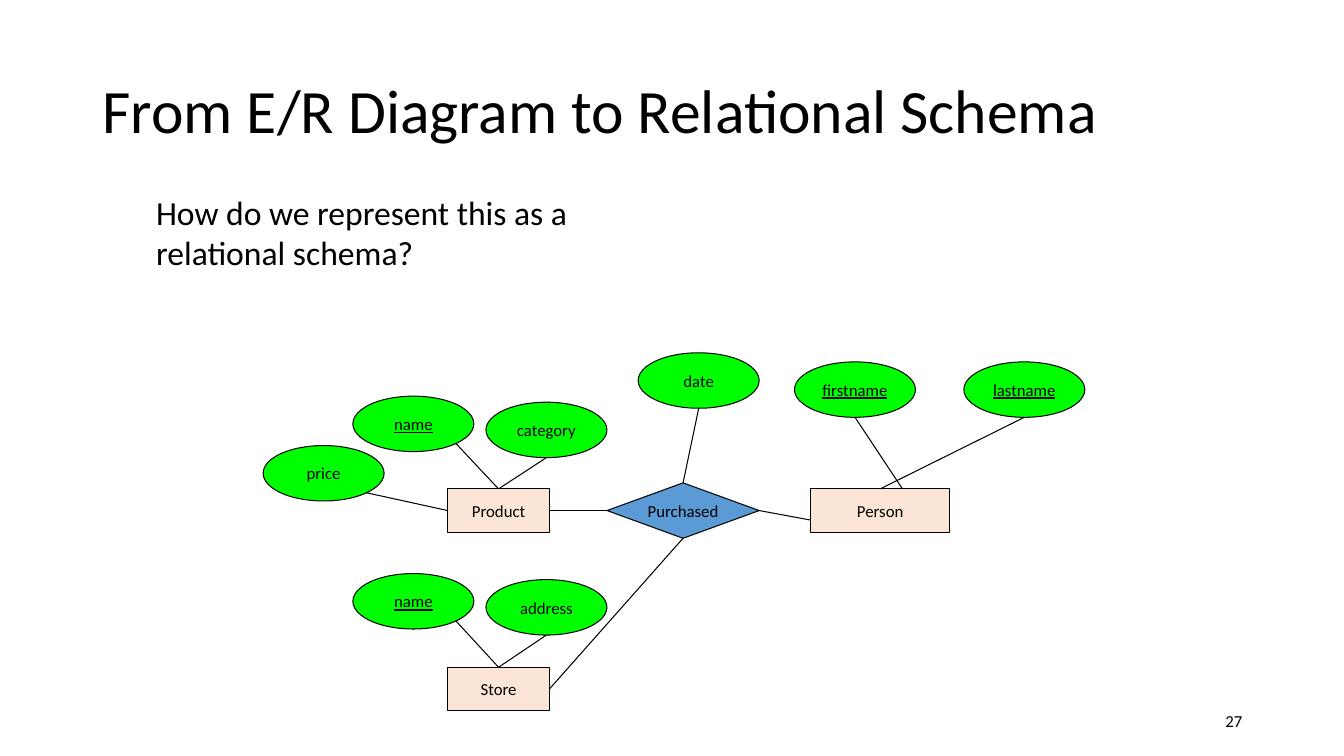
from collections import namedtuple
from pptx import Presentation
from pptx.dml.color import RGBColor as RGB
from pptx.enum.shapes import MSO_CONNECTOR as CONN, MSO_SHAPE as SHAPE
from pptx.enum.text import MSO_ANCHOR as ANCHOR, PP_ALIGN as ALIGN
from pptx.oxml.ns import qn
from pptx.util import Inches, Pt
from lxml import etree

Theme = namedtuple("Theme", "font ink entity attribute relation title body label line")
THEME = Theme("Calibri", RGB(0, 0, 0), RGB(0xFB, 0xE5, 0xD6), RGB(0, 0xFF, 0),
              RGB(0x5B, 0x9B, 0xD5), Pt(44), Pt(24), Pt(12), Pt(0.75))

TEXTS = [
    ("From E/R Diagram to Relational Schema", (0.92, 0.4, 11.5, 1.45),
     THEME.title, ALIGN.LEFT, ANCHOR.MIDDLE, 0.9),
    ("How do we represent this as a relational schema?", (1.45, 1.85, 4.36, 0.91),
     THEME.body, ALIGN.LEFT, ANCHOR.TOP, 1.0),
    ("27", (9.42, 6.95, 3, 0.4), THEME.label, ALIGN.RIGHT, ANCHOR.MIDDLE, 1.0),
]

KINDS = {
    "entity": (SHAPE.RECTANGLE, THEME.entity, 1.01, 0.43),
    "person": (SHAPE.RECTANGLE, THEME.entity, 1.38, 0.43),
    "relation": (SHAPE.DIAMOND, THEME.relation, 1.51, 0.55),
    "attribute": (SHAPE.OVAL, THEME.attribute, 1.2, 0.55),
    "key": (SHAPE.OVAL, THEME.attribute, 1.2, 0.55),
}

NODES = {
    "purchased": ("Purchased", "relation", 6.02, 4.79),
    "product": ("Product", "entity", 4.44, 4.85),
    "person": ("Person", "person", 8.04, 4.85),
    "store": ("Store", "entity", 4.44, 6.62),
    "product name": ("name", "key", 3.5, 3.93),
    "category": ("category", "attribute", 4.82, 3.99),
    "price": ("price", "attribute", 2.61, 4.42),
    "date": ("date", "attribute", 6.33, 3.5),
    "firstname": ("firstname", "key", 7.88, 3.59),
    "lastname": ("lastname", "key", 9.56, 3.59),
    "store name": ("name", "key", 3.5, 5.69),
    "address": ("address", "attribute", 4.82, 5.75),
}

TOP, LEFT, BOTTOM, RIGHT = SIDES = [(0.5, 0), (0, 0.5), (0.5, 1), (1, 0.5)]
LOWER_RIGHT = (0.85, 0.85)

LINKS = [
    ("price", LOWER_RIGHT, "product", LEFT),
    ("product name", LOWER_RIGHT, "product", TOP),
    ("category", BOTTOM, "product", TOP),
    ("firstname", BOTTOM, "person", (0.66, 0)),
    ("lastname", BOTTOM, "person", TOP),
    ("product", RIGHT, "purchased", LEFT),
    ("purchased", RIGHT, "person", (0, 0.72)),
    ("date", BOTTOM, "purchased", TOP),
    ("store name", LOWER_RIGHT, "store", TOP),
    ("address", BOTTOM, "store", TOP),
    ("store", RIGHT, "purchased", BOTTOM),
]


def write(sp, text, size, align, anchor, wrap, spacing=1.0):
    tf = sp.text_frame
    tf.word_wrap = wrap
    tf.vertical_anchor = anchor
    p = tf.paragraphs[0]
    p.text = text
    p.alignment = align
    p.line_spacing = spacing
    p.font.name = THEME.font
    p.font.size = size
    p.font.color.rgb = THEME.ink
    return p


def add_node(s, text, kind, x, y):
    preset, fill, w, h = KINDS[kind]
    sp = s.shapes.add_shape(preset, *map(Inches, (x, y, w, h)))
    sp.shadow.inherit = False
    sp.fill.solid()
    sp.fill.fore_color.rgb = fill
    sp.line.color.rgb = THEME.ink
    sp.line.width = THEME.line
    p = write(sp, text, THEME.label, ALIGN.CENTER, ANCHOR.MIDDLE, False)
    if kind == "key":
        p.font.underline = True
    return sp


def point(sp, spot):
    return int(sp.left + sp.width * spot[0]), int(sp.top + sp.height * spot[1])


def add_link(s, nodes, start, start_spot, end, end_spot):
    a, b = nodes[start], nodes[end]
    line = s.shapes.add_connector(CONN.STRAIGHT, *point(a, start_spot), *point(b, end_spot))
    line.line.color.rgb = THEME.ink
    line.line.width = THEME.line
    etree.SubElement(line._element.spPr, qn("a:effectLst"))
    for sp, spot, join in ((a, start_spot, line.begin_connect), (b, end_spot, line.end_connect)):
        if sp.auto_shape_type != SHAPE.OVAL and spot in SIDES:
            join(sp, SIDES.index(spot))


def main():
    prs = Presentation()
    prs.slide_width, prs.slide_height = Inches(13.33), Inches(7.5)
    s = prs.slides.add_slide(prs.slide_layouts[6])
    for text, box, size, align, anchor, spacing in TEXTS:
        write(s.shapes.add_textbox(*map(Inches, box)), text, size, align, anchor, True, spacing)
    nodes = {name: add_node(s, *node) for name, node in NODES.items()}
    for link in LINKS:
        add_link(s, nodes, *link)
    prs.save("out.pptx")


if __name__ == "__main__":
    main()
